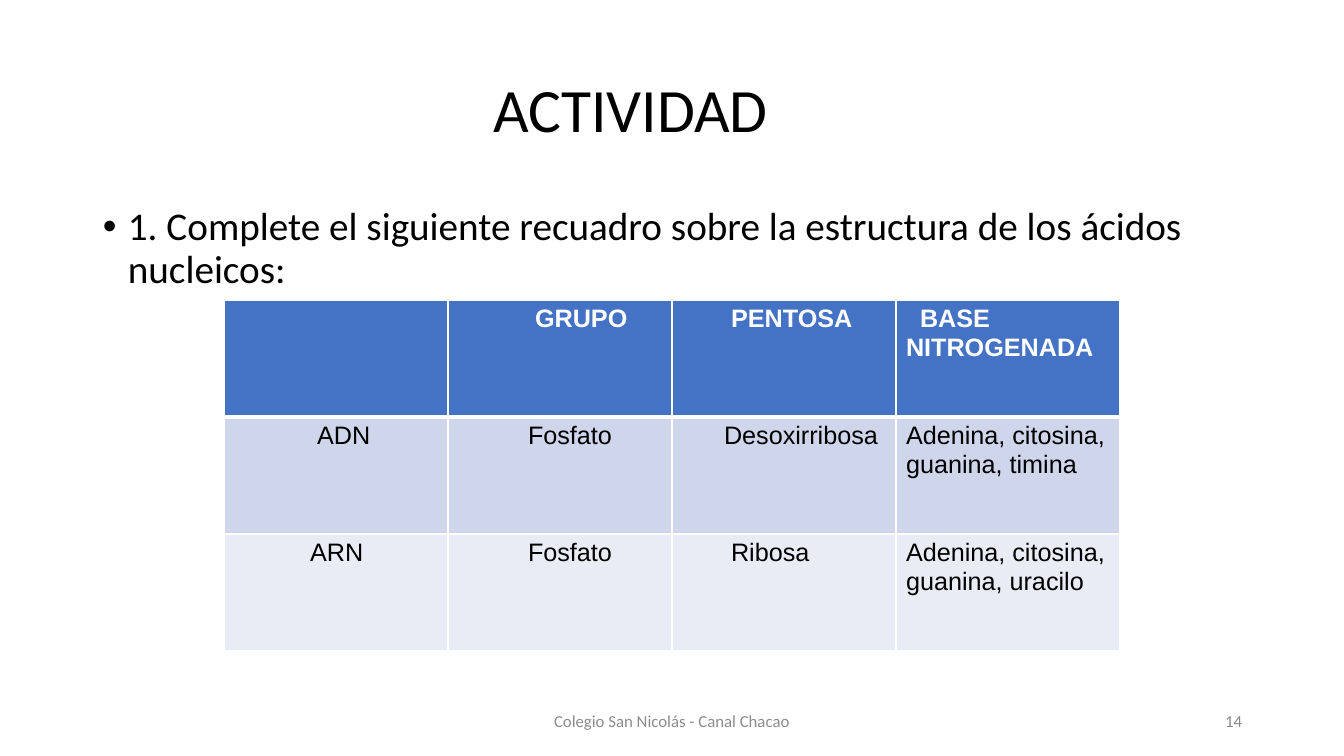
from dataclasses import dataclass

from lxml.etree import SubElement
from pptx import Presentation
from pptx.dml.color import RGBColor as RGB
from pptx.enum.text import MSO_ANCHOR as Anchor, MSO_AUTO_SIZE as AutoSize, PP_ALIGN as Align
from pptx.oxml import parse_xml
from pptx.oxml.ns import nsdecls, qn
from pptx.util import Emu, Pt


@dataclass(frozen=True)
class Theme:
    heading_font: str = "Calibri"
    table_font: str = "Arial"
    title_size: int = 44
    body_size: int = 28
    table_size: int = 18
    footer_size: int = 12
    ink: str = "000000"
    white: str = "FFFFFF"
    footer: str = "8C8C8C"
    number: str = "898989"
    row_fills: tuple = ("4472C4", "CFD5EA", "E9EBF5")


def px(length):
    return Emu(round(length * 914400 / 100.8))


def write(frame, text, font, size, color, bold=False, align=Align.LEFT, spacing=None):
    frame.word_wrap = True
    para = frame.paragraphs[0]
    para.text = text
    para.alignment = align
    para.line_spacing = spacing
    for span in para.runs:
        span.font.name = font
        span.font.size = Pt(size)
        span.font.bold = bold
        span.font.color.rgb = RGB.from_string(color)
    return para._p.get_or_add_pPr()


theme = Theme()
deck = Presentation()
deck.slide_width, deck.slide_height = px(1344), px(756)
page = deck.slides.add_slide(deck.slide_layouts[5])

title = page.shapes.title
title.left, title.top, title.width, title.height = px(93), px(40), px(1159), px(146)
title.text_frame.auto_size = AutoSize.NONE
title.text_frame.vertical_anchor = Anchor.MIDDLE
title_props = write(title.text_frame, "ACTIVIDAD", theme.heading_font, theme.title_size,
                    theme.ink, spacing=0.9)
title_props.set("indent", str(px(390)))

task = page.shapes.add_textbox(px(93), px(202), px(1159), px(480))
task_props = write(task.text_frame,
                   "1. Complete el siguiente recuadro sobre la estructura de los ácidos nucleicos:",
                   theme.heading_font, theme.body_size, theme.ink, spacing=0.9)
task_props.set("marL", str(px(25)))
task_props.set("indent", str(-px(25)))
SubElement(task_props, qn("a:buFont")).set("typeface", "Arial")
SubElement(task_props, qn("a:buChar")).set("char", "•")

footers = [
    ("Colegio San Nicolás - Canal Chacao", 445, 454, Align.CENTER, theme.footer),
    ("14", 949, 303, Align.RIGHT, theme.number),
]
for text, left, width, align, color in footers:
    box = page.shapes.add_textbox(px(left), px(701), px(width), px(40))
    box.text_frame.vertical_anchor = Anchor.MIDDLE
    write(box.text_frame, text, theme.heading_font, theme.footer_size, color, align=align)

rows = [
    [("", 0), ("GRUPO", 77), ("PENTOSA", 49), ("BASE NITROGENADA", 14)],
    [("ADN", 83), ("Fosfato", 70), ("Desoxirribosa", 42), ("Adenina, citosina, guanina, timina", 0)],
    [("ARN", 76), ("Fosfato", 70), ("Ribosa", 49), ("Adenina, citosina, guanina, uracilo", 0)],
]
table = page.shapes.add_table(3, 4, px(224), px(300), px(896), px(351)).table
for row_index, row in enumerate(rows):
    header = row_index == 0
    for column_index, (text, indent) in enumerate(row):
        cell = table.cell(row_index, column_index)
        cell.fill.solid()
        cell.fill.fore_color.rgb = RGB.from_string(theme.row_fills[row_index])
        cell_props = write(cell.text_frame, text, theme.table_font, theme.table_size,
                           theme.white if header else theme.ink, bold=header)
        cell_props.set("marL", "0")
        cell_props.set("indent", str(px(indent)))
        widths = {"L": 1, "R": 1, "T": 3 if row_index == 1 else 1, "B": 3 if header else 1}
        for position, (side, width) in enumerate(widths.items()):
            border = parse_xml(
                f'<a:ln{side} {nsdecls("a")} w="{Pt(width)}"><a:solidFill>'
                f'<a:srgbClr val="{theme.white}"/></a:solidFill></a:ln{side}>')
            cell._tc.get_or_add_tcPr().insert(position, border)

deck.save("out.pptx")
